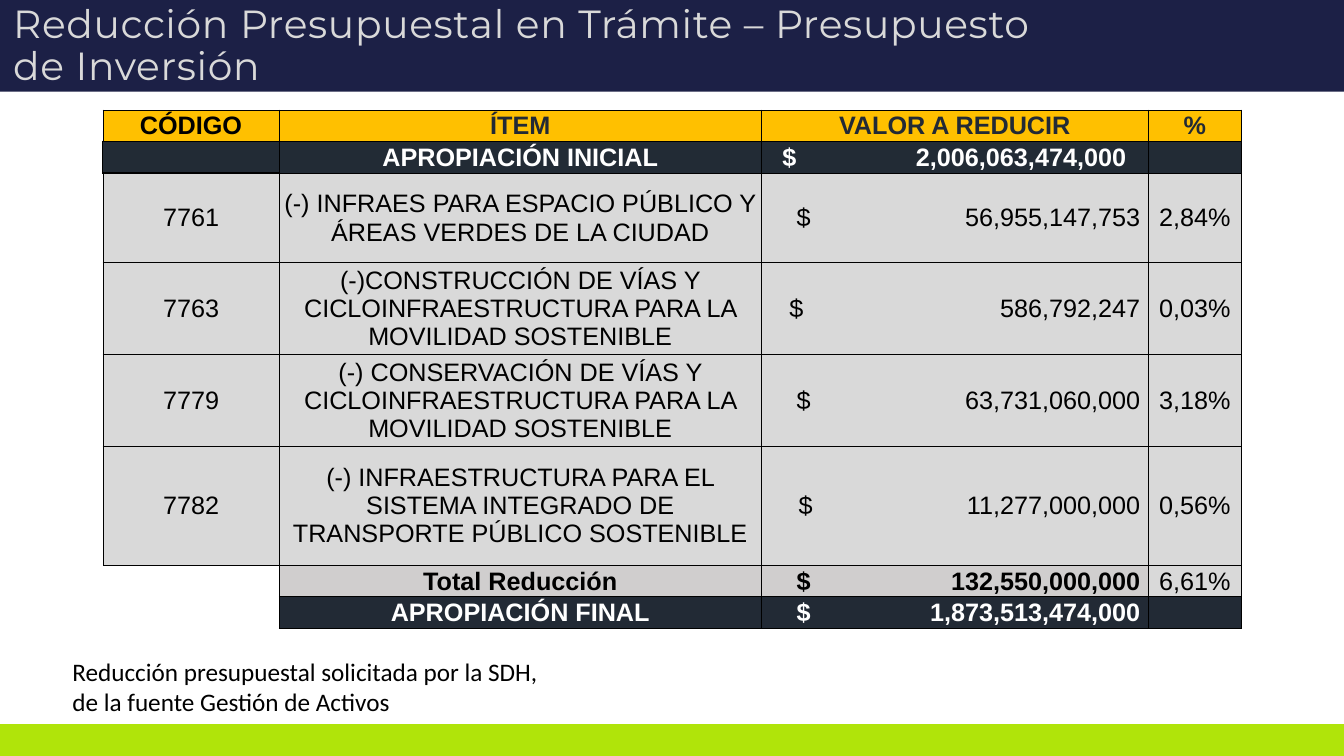
from lxml import etree
from pptx import Presentation
from pptx.dml.color import RGBColor
from pptx.enum import shapes, text
from pptx.oxml import ns
from pptx.util import Inches, Pt

NAVY = RGBColor(0x1C, 0x20, 0x46)
LIME = RGBColor(0xB0, 0xE4, 0x0A)
GOLD = RGBColor(0xFF, 0xC0, 0x00)
INK = RGBColor(0x22, 0x2A, 0x35)
DARK = RGBColor(0x22, 0x2B, 0x35)
GREY = RGBColor(0xD9, 0xD9, 0xD9)
ROSE = RGBColor(0xD0, 0xCE, 0xCE)
WHITE = RGBColor(0xFF, 0xFF, 0xFF)
BLACK = RGBColor(0x00, 0x00, 0x00)

COLS = [1.75, 4.78, 3.84, 0.92]
MONEY = 2  # column of the amounts

# Row height, fill, font colour, bold, texts
ROWS = [
    (0.31, GOLD, INK, True, ["CÓDIGO", "ÍTEM", "VALOR A REDUCIR", "%"]),
    (0.31, DARK, WHITE, True,
     ["", "APROPIACIÓN INICIAL", "$\t2,006,063,474,000", ""]),
    (0.89, GREY, BLACK, False,
     ["7761", "(-) INFRAES PARA ESPACIO PÚBLICO Y ÁREAS VERDES DE LA CIUDAD",
      "$\t56,955,147,753", "2,84%"]),
    (0.91, GREY, BLACK, False,
     ["7763", "(-)CONSTRUCCIÓN DE VÍAS Y CICLOINFRAESTRUCTURA PARA LA "
      "MOVILIDAD SOSTENIBLE", "$\t586,792,247", "0,03%"]),
    (0.91, GREY, BLACK, False,
     ["7779", "(-) CONSERVACIÓN DE VÍAS Y CICLOINFRAESTRUCTURA PARA LA "
      "MOVILIDAD SOSTENIBLE", "$\t63,731,060,000", "3,18%"]),
    (1.18, GREY, BLACK, False,
     ["7782", "(-) INFRAESTRUCTURA PARA EL SISTEMA INTEGRADO DE TRANSPORTE "
      "PÚBLICO SOSTENIBLE", "$\t11,277,000,000", "0,56%"]),
    (0.31, ROSE, BLACK, True,
     ["", "Total Reducción", "$\t132,550,000,000", "6,61%"]),
    (0.31, INK, WHITE, True,
     ["", "APROPIACIÓN FINAL", "$\t1,873,513,474,000", ""]),
]

# Left and right edge of the amount within its cell, where not the usual one
EDGES = {1: (0.21, 3.62), 3: (0.28, 3.76), 5: (0.37, 3.76)}
USUAL = (0.35, 3.76)

# Cells whose borders differ: side and width in points
EDGED = {
    (0, 0): {"L": 0.5, "R": 0.5, "T": 0.5, "B": 1},
    (1, 0): dict.fromkeys("LRTB", 1),
    (1, 1): {"L": 1, "R": 0.5, "T": 0.5, "B": 0.5},
    (2, 0): {"L": 0.5, "R": 0.5, "T": 1, "B": 0.5},
    (6, 0): {"R": 0.5, "T": 0.5},
    (7, 0): {"R": 0.5},
}
FILLS = {(6, 0): WHITE, (7, 0): WHITE, (6, 3): GREY}


def style(par, face, size, color, bold=False):
    for run in par.runs:
        font = run.font
        font.name, font.size, font.bold = face, Pt(size), bold
        font.color.rgb = color


def band(slide, top, high, color):
    bar = slide.shapes.add_shape(shapes.MSO_SHAPE.RECTANGLE, 0, Inches(top),
                                 Inches(13.33), Inches(high))
    bar.shadow.inherit = False
    bar.fill.solid()
    bar.fill.fore_color.rgb = color
    bar.line.fill.background()
    return bar


def heading(slide, words):
    title = slide.shapes.title
    title.left, title.top = Inches(0.13), Inches(0.03)
    title.width, title.height = Inches(10.71), Inches(0.86)
    frame = title.text_frame
    frame.text = words
    frame.word_wrap = True
    frame.auto_size = text.MSO_AUTO_SIZE.NONE
    frame.vertical_anchor = text.MSO_ANCHOR.MIDDLE
    frame.margin_left = frame.margin_right = frame.margin_bottom = 0
    frame.margin_top = Inches(0.01)
    par = frame.paragraphs[0]
    par.alignment = text.PP_ALIGN.LEFT
    par.line_spacing = 0.9
    style(par, "Montserrat", 28, GREY)
    par.runs[0].font._element.set("spc", "50")
    # Bring the title in front of the band
    slide.shapes._spTree.append(title._element)


def border(cell, sides):
    props = cell._tc.get_or_add_tcPr()
    for side in "LRTB":
        if side not in sides:
            continue
        line = etree.SubElement(props, ns.qn("a:ln" + side),
                                w=str(Pt(sides[side])))
        solid = etree.SubElement(line, ns.qn("a:solidFill"))
        etree.SubElement(solid, ns.qn("a:srgbClr"), val=str(BLACK))


def tab(par, place):
    stops = etree.SubElement(par._p.get_or_add_pPr(), ns.qn("a:tabLst"))
    etree.SubElement(stops, ns.qn("a:tab"), pos=str(Inches(place)), algn="r")


def fill(cell, words, spot, back, color, bold):
    border(cell, EDGED.get(spot, dict.fromkeys("LRTB", 0.5)))
    cell.fill.solid()
    cell.fill.fore_color.rgb = FILLS.get(spot, back)
    cell.vertical_anchor = text.MSO_ANCHOR.MIDDLE
    cell.margin_left = cell.margin_right = cell.margin_top = Inches(0.01)
    cell.margin_bottom = 0
    cell.text = words
    par = cell.text_frame.paragraphs[0]
    par.alignment = text.PP_ALIGN.CENTER
    if "\t" in words:
        left, right = EDGES.get(spot[0], USUAL)
        cell.margin_left = Inches(left)
        par.alignment = text.PP_ALIGN.LEFT
        tab(par, right - left)
    if spot == (0, 0):
        color = BLACK
    style(par, "Arial", 18, color, bold and spot != (6, 3))


def budget(slide):
    grid = slide.shapes.add_table(len(ROWS), len(COLS), Inches(1.02),
                                  Inches(1.09), Inches(sum(COLS)),
                                  Inches(sum(row[0] for row in ROWS))).table
    grid.first_row = grid.horz_banding = False
    for col, wide in zip(grid.columns, COLS):
        col.width = Inches(wide)
    for r, (high, back, color, bold, words) in enumerate(ROWS):
        grid.rows[r].height = Inches(high)
        for c, word in enumerate(words):
            fill(grid.cell(r, c), word, (r, c), back, color, bold)


def note(slide, words):
    box = slide.shapes.add_textbox(Inches(0.62), Inches(6.46),
                                   Inches(5.07), Inches(0.71))
    box.text_frame.word_wrap = True
    box.text_frame.text = words
    style(box.text_frame.paragraphs[0], "Calibri", 18, BLACK)


def main():
    deck = Presentation()
    deck.slide_width, deck.slide_height = Inches(13.33), Inches(7.5)
    slide = deck.slides.add_slide(deck.slide_layouts[5])

    # Bands at foot and head
    foot = band(slide, 7.19, 0.31, LIME)
    foot.line.color.rgb = LIME
    foot.line.width = Pt(1)
    band(slide, 0, 0.91, NAVY)

    # Title, table and note
    heading(slide, "Reducción Presupuestal en Trámite – Presupuesto "
                   "de Inversión")
    budget(slide)
    note(slide, "Reducción presupuestal solicitada por la SDH, "
                "de la fuente Gestión de Activos")
    deck.save("out.pptx")


if __name__ == "__main__":
    main()
